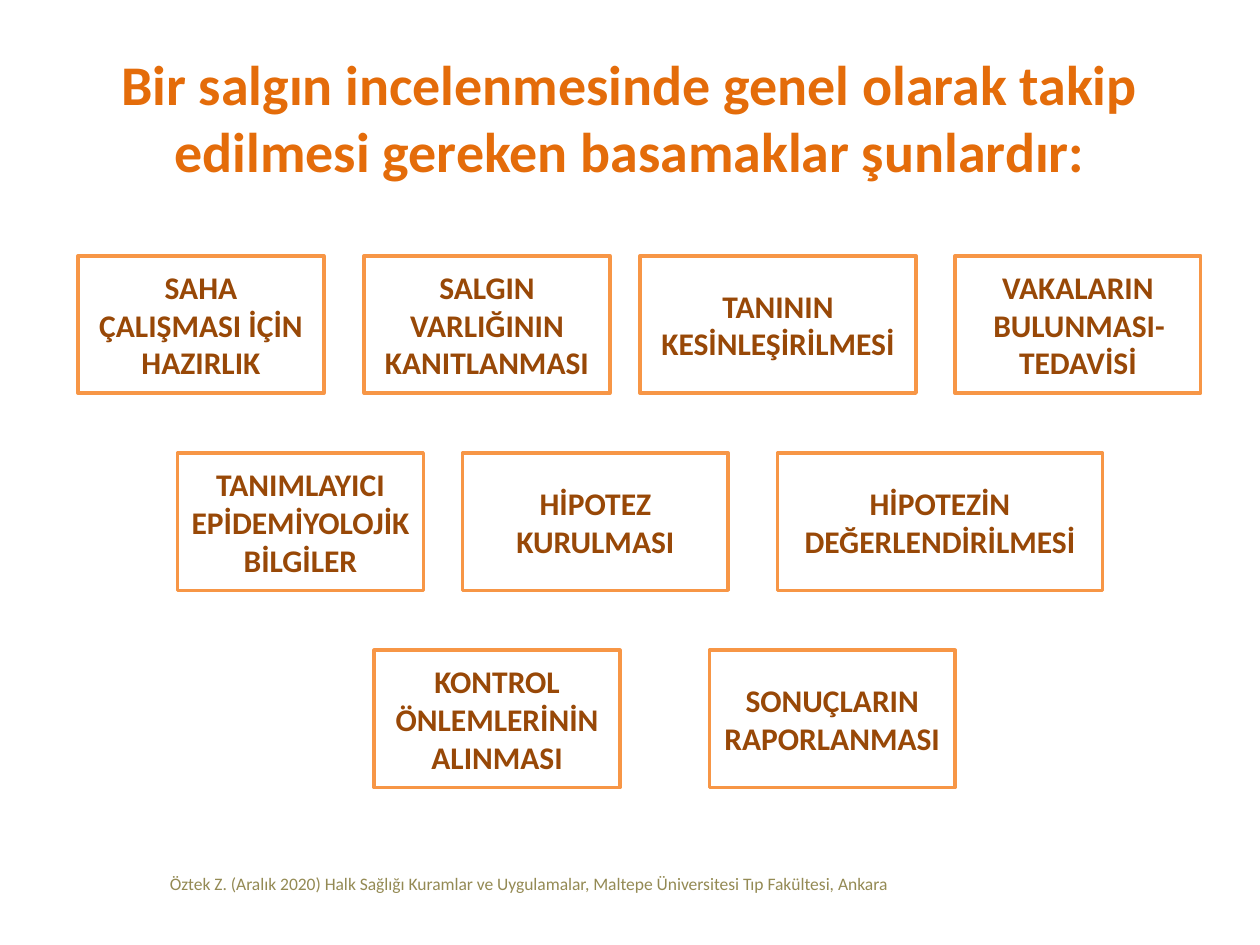
from pptx import Presentation
from pptx.dml.color import RGBColor
from pptx.enum.shapes import MSO_SHAPE
from pptx.enum.text import MSO_ANCHOR, PP_ALIGN
from pptx.util import Inches, Pt

ORANGE = RGBColor(0xE4, 0x6C, 0x0A)
BORDER = RGBColor(0xF7, 0x96, 0x46)
BROWN = RGBColor(0x98, 0x48, 0x07)
OLIVE = RGBColor(0x94, 0x8A, 0x54)
WHITE = RGBColor(0xFF, 0xFF, 0xFF)
FONT = "Calibri"

# Content: each step is (text, left, width); each row holds its steps
TITLE = "Bir salgın incelenmesinde genel olarak takip edilmesi gereken basamaklar şunlardır:"
CITATION = ("Öztek Z. (Aralık 2020) Halk Sağlığı Kuramlar ve Uygulamalar, "
            "Maltepe Üniversitesi Tıp Fakültesi, Ankara")
STEP_WIDTH = 1.95
STEP_ROWS = [
    [("SAHA ÇALIŞMASI İÇİN HAZIRLIK", 0.62, STEP_WIDTH),
     ("SALGIN VARLIĞININ KANITLANMASI", 2.89, STEP_WIDTH),
     ("TANININ KESİNLEŞİRİLMESİ", 5.08, 2.19),
     ("VAKALARIN BULUNMASI-TEDAVİSİ", 7.58, STEP_WIDTH)],
    [("TANIMLAYICI EPİDEMİYOLOJİK BİLGİLER", 1.41, STEP_WIDTH),
     ("HİPOTEZ KURULMASI", 3.67, 2.11),
     ("HİPOTEZİN DEĞERLENDİRİLMESİ", 6.17, 2.58)],
    [("KONTROL ÖNLEMLERİNİN ALINMASI", 2.97, STEP_WIDTH),
     ("SONUÇLARIN RAPORLANMASI", 5.63, STEP_WIDTH)],
]
FIRST_ROW_TOP, ROW_PITCH, STEP_HEIGHT = 2.03, 1.565, 1.09


def write(frame, text, size, color, bold, align):
    frame.word_wrap = True
    paragraph = frame.paragraphs[0]
    paragraph.alignment = align
    run = paragraph.add_run()
    run.text = text
    run.font.name = FONT
    run.font.size = Pt(size)
    run.font.bold = bold
    run.font.color.rgb = color
    return paragraph


def add_step(slide, text, left, top, width):
    step = slide.shapes.add_shape(MSO_SHAPE.RECTANGLE, Inches(left), Inches(top),
                                  Inches(width), Inches(STEP_HEIGHT))
    step.shadow.inherit = False
    step.fill.solid()
    step.fill.fore_color.rgb = WHITE
    step.line.color.rgb = BORDER
    step.line.width = Pt(2)
    step.text_frame.vertical_anchor = MSO_ANCHOR.MIDDLE
    write(step.text_frame, text, 18, BROWN, True, PP_ALIGN.CENTER)


def main():
    deck = Presentation()
    deck.slide_width, deck.slide_height = Inches(10), Inches(7.5)
    slide = deck.slides.add_slide(deck.slide_layouts[5])

    # Title
    title = slide.shapes.title
    title.left, title.top = Inches(0.5), Inches(0.3)
    title.width, title.height = Inches(9), Inches(1.25)
    title.text_frame.vertical_anchor = MSO_ANCHOR.MIDDLE
    write(title.text_frame, TITLE, 32, ORANGE, True, PP_ALIGN.CENTER)

    # Steps of the investigation
    for row, steps in enumerate(STEP_ROWS):
        for text, left, width in steps:
            add_step(slide, text, left, FIRST_ROW_TOP + row * ROW_PITCH, width)

    # Citation
    citation = slide.shapes.add_textbox(Inches(1.25), Inches(6.88), Inches(8.44), Inches(0.57))
    paragraph = write(citation.text_frame, CITATION, 10, OLIVE, False, PP_ALIGN.LEFT)
    paragraph.space_before = Pt(2)
    indent = paragraph._p.get_or_add_pPr()
    indent.set("marL", str(Inches(0.38)))
    indent.set("indent", str(Inches(-0.38)))

    deck.save("out.pptx")


if __name__ == "__main__":
    main()
